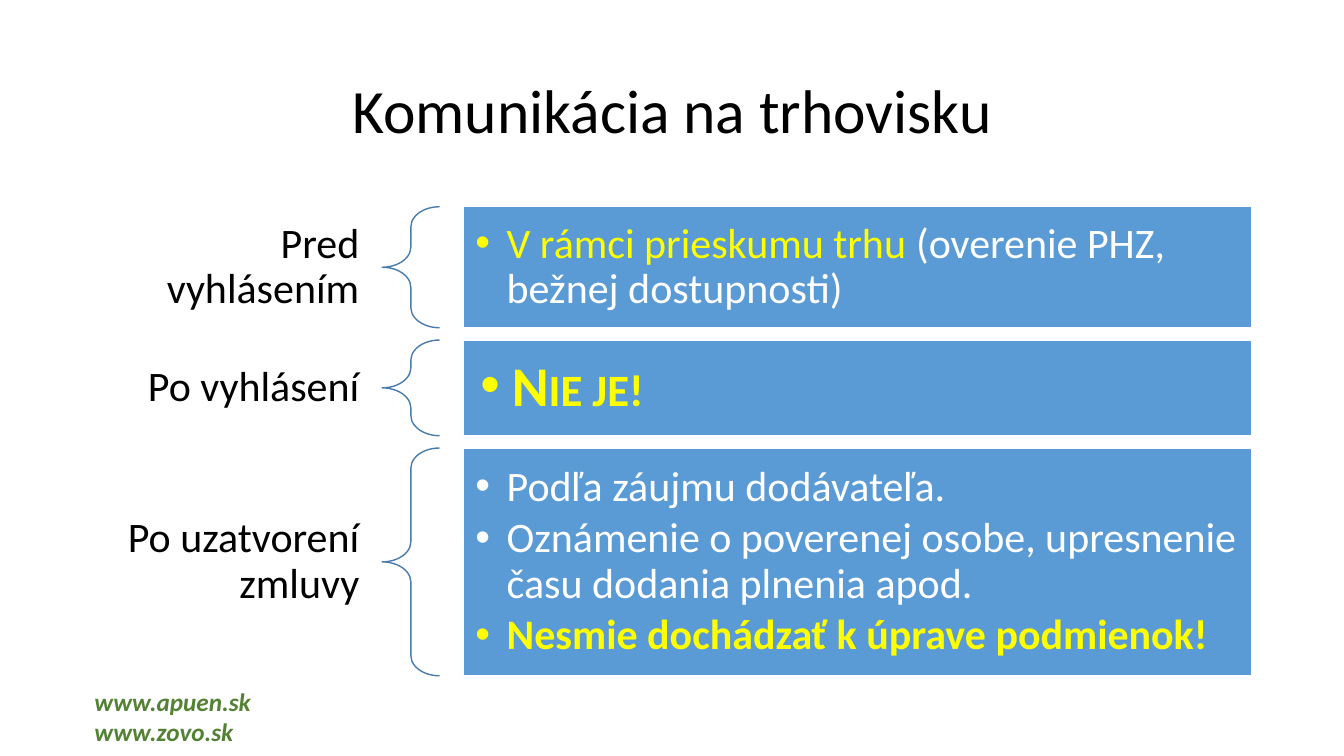
from dataclasses import dataclass

import pptx
import pptx.dml.color
import pptx.enum.shapes
import pptx.enum.text
import pptx.oxml.ns
import pptx.util
from lxml import etree
from pptx.util import Cm, Pt

FONT = "Calibri"
BLACK, WHITE, YELLOW = "000000", "FFFFFF", "FFFF00"
BLUE, BRACE_BLUE, GREEN = "5B9BD5", "497CAB", "548235"
LABEL_LEFT, LABEL_WIDTH = 2.34, 7.3
BRACE_LEFT, BRACE_WIDTH = 9.63, 1.45
PANEL_LEFT, PANEL_WIDTH = 11.68, 19.86
FIRST_TOP, ROW_GAP = 5.21, 0.31
BULLET_INDENT = 0.79


@dataclass(frozen=True)
class Piece:
    text: str
    color: str = WHITE
    size: float = 30
    bold: bool = False
    italic: bool = False
    small_caps: bool = False


@dataclass(frozen=True)
class Phase:
    label: str
    height: float
    label_height: float
    inset: float
    bullets: tuple[tuple[Piece, ...], ...]


PHASES = (
    Phase("Pred vyhlásením", 3.05, 2.79, 0.3, (
        (Piece("V rámci prieskumu trhu", YELLOW),
         Piece(" (overenie PHZ, bežnej dostupnosti)")),
    )),
    Phase("Po vyhlásení", 2.41, 1.65, 0.43, (
        (Piece("Nie je!", YELLOW, 40, bold=True, small_caps=True),),
    )),
    Phase("Po uzatvorení zmluvy", 5.74, 2.79, 0.3, (
        (Piece("Podľa záujmu dodávateľa."),),
        (Piece("Oznámenie o poverenej osobe, upresnenie času dodania plnenia apod."),),
        (Piece("Nesmie dochádzať k úprave podmienok!", YELLOW, bold=True),),
    )),
)


def rgb(color: str) -> pptx.dml.color.RGBColor:
    return pptx.dml.color.RGBColor.from_string(color)


def format_run(run, piece: Piece) -> None:
    run.font.name = FONT
    run.font.size = Pt(piece.size)
    run.font.bold = piece.bold
    run.font.italic = piece.italic
    run.font.color.rgb = rgb(piece.color)
    if piece.small_caps:
        run._r.get_or_add_rPr().set("cap", "small")


def fill_paragraph(paragraph, pieces: tuple[Piece, ...], alignment, spacing: float = 0.9) -> None:
    paragraph.alignment = alignment
    paragraph.line_spacing = spacing
    for piece in pieces:
        run = paragraph.add_run()
        run.text = piece.text
        format_run(run, piece)


def add_bullet(paragraph) -> None:
    properties = paragraph._p.get_or_add_pPr()
    properties.set("marL", str(Cm(BULLET_INDENT)))
    properties.set("indent", str(-Cm(BULLET_INDENT)))
    font = etree.SubElement(properties, pptx.oxml.ns.qn("a:buFont"))
    font.set("typeface", "Arial")
    bullet = etree.SubElement(properties, pptx.oxml.ns.qn("a:buChar"))
    bullet.set("char", "•")


def prepare_frame(frame, horizontal: float, vertical: float, anchor) -> None:
    frame.word_wrap = True
    frame.auto_size = pptx.enum.text.MSO_AUTO_SIZE.NONE
    frame.vertical_anchor = anchor
    frame.margin_left = frame.margin_right = Cm(horizontal)
    frame.margin_top = frame.margin_bottom = Cm(vertical)


def add_label(slide, phase: Phase, top: float) -> None:
    label_top = top + (phase.height - phase.label_height) / 2
    label = slide.shapes.add_textbox(
        Cm(LABEL_LEFT), Cm(label_top), Cm(LABEL_WIDTH), Cm(phase.label_height))
    prepare_frame(label.text_frame, 0.58, 0.2, pptx.enum.text.MSO_ANCHOR.MIDDLE)
    fill_paragraph(label.text_frame.paragraphs[0], (Piece(phase.label, BLACK),),
                   pptx.enum.text.PP_ALIGN.RIGHT)


def add_brace(slide, phase: Phase, top: float) -> None:
    brace = slide.shapes.add_shape(
        pptx.enum.shapes.MSO_SHAPE.LEFT_BRACE,
        Cm(BRACE_LEFT), Cm(top), Cm(BRACE_WIDTH), Cm(phase.height))
    brace.adjustments[0] = 0.35
    brace.adjustments[1] = 0.5
    brace.shadow.inherit = False
    brace.fill.background()
    brace.line.color.rgb = rgb(BRACE_BLUE)
    brace.line.width = Pt(1)


def add_panel(slide, phase: Phase, top: float) -> None:
    panel = slide.shapes.add_shape(
        pptx.enum.shapes.MSO_SHAPE.RECTANGLE,
        Cm(PANEL_LEFT), Cm(top), Cm(PANEL_WIDTH), Cm(phase.height))
    panel.shadow.inherit = False
    panel.fill.solid()
    panel.fill.fore_color.rgb = rgb(BLUE)
    panel.line.color.rgb = rgb(WHITE)
    panel.line.width = Pt(1)
    frame = panel.text_frame
    prepare_frame(frame, phase.inset, phase.inset, pptx.enum.text.MSO_ANCHOR.MIDDLE)
    for index, pieces in enumerate(phase.bullets):
        paragraph = frame.add_paragraph() if index else frame.paragraphs[0]
        add_bullet(paragraph)
        paragraph.level = 1
        paragraph.space_after = Pt(4.5)
        fill_paragraph(paragraph, pieces, pptx.enum.text.PP_ALIGN.LEFT)


def set_title(slide, text: str) -> None:
    title = slide.shapes.title
    title.left, title.top, title.width, title.height = Cm(2.34), Cm(1.02), Cm(29.21), Cm(3.68)
    prepare_frame(title.text_frame, 0.25, 0.13, pptx.enum.text.MSO_ANCHOR.MIDDLE)
    fill_paragraph(title.text_frame.paragraphs[0], (Piece(text, BLACK, 44),),
                   pptx.enum.text.PP_ALIGN.CENTER)


def add_websites(slide, addresses: tuple[str, ...]) -> None:
    websites = slide.shapes.add_textbox(Cm(2.13), Cm(17.17), Cm(6.78), Cm(1.8))
    frame = websites.text_frame
    prepare_frame(frame, 0.25, 0.13, pptx.enum.text.MSO_ANCHOR.TOP)
    frame.text = "\n".join(addresses)
    for paragraph in frame.paragraphs:
        for run in paragraph.runs:
            format_run(run, Piece(run.text, GREEN, 18, bold=True, italic=True))


def main() -> None:
    presentation = pptx.Presentation()
    presentation.slide_width, presentation.slide_height = Cm(33.87), Cm(19.05)
    slide = presentation.slides.add_slide(presentation.slide_layouts[5])
    add_websites(slide, ("www.apuen.sk", "www.zovo.sk"))
    set_title(slide, "Komunikácia na trhovisku")
    top = FIRST_TOP
    for phase in PHASES:
        add_label(slide, phase, top)
        add_brace(slide, phase, top)
        add_panel(slide, phase, top)
        top += phase.height + ROW_GAP
    presentation.save("out.pptx")


if __name__ == "__main__":
    main()
